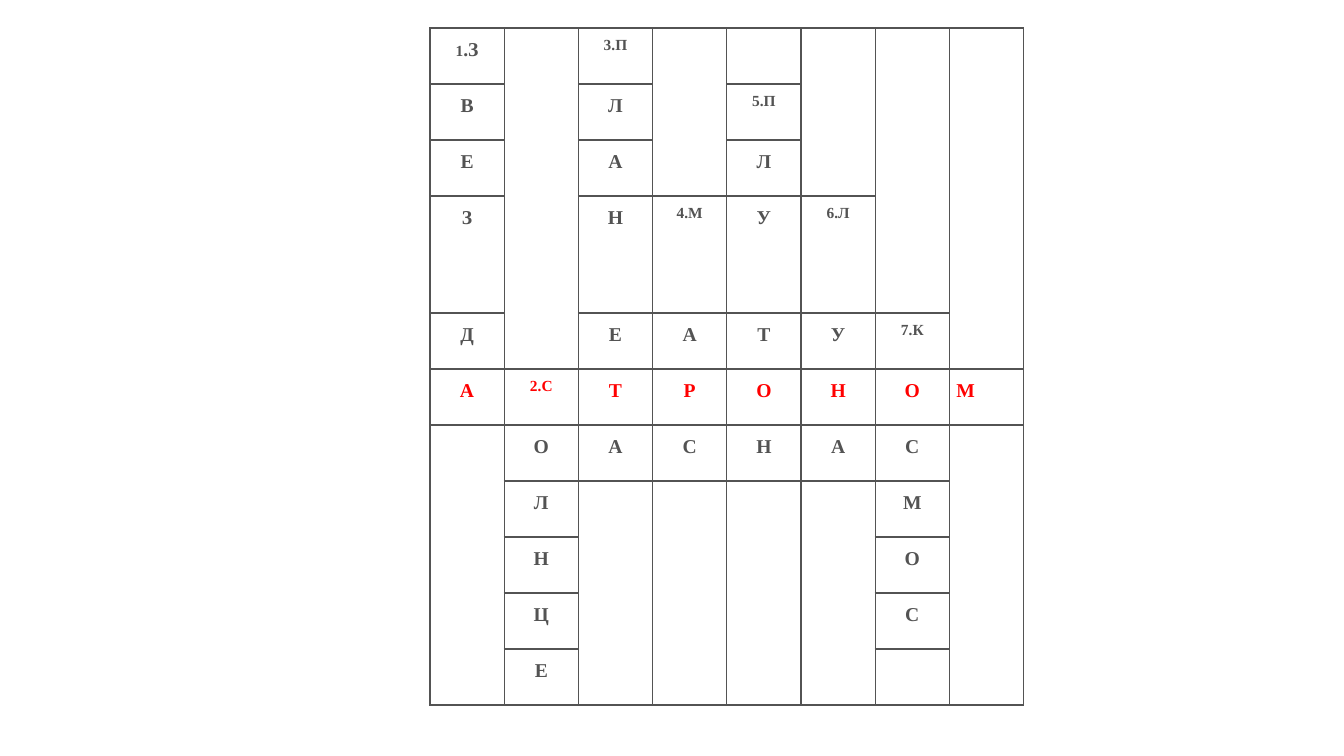
from lxml import etree
from pptx import Presentation
from pptx import util as u
from pptx.dml.color import RGBColor
from pptx.enum import text
from pptx.oxml.ns import qn

PX = 914400 / 100.8
COLORS = {"ink": "535353", "answer": "FF0000", "line": "535353"}
FONT = {"name": "Times New Roman", "bold": True}
SMALL, LARGE = u.Pt(11), u.Pt(14)
ANSWER = 5  # row that holds the solution word
TALL = 3
# "^" joins a cell to the one above; "~" parts runs of different size
GRID = [row.split("|") for row in (
    "1~.З||3.П|||||",
    "В|^|Л|^|5.П|^|^|^",
    "Е|^|А|^|Л|^|^|^",
    "З|^|Н|4.М|У|6.Л|^|^",
    "Д|^|Е|А|Т|У|7.К|^",
    "А|2.С|Т|Р|О|Н|О|М",
    "|О|А|С|Н|А|С|",
    "^|Л|||||М|^",
    "^|Н|^|^|^|^|О|^",
    "^|Ц|^|^|^|^|С|^",
    "^|Е|^|^|^|^||^",
)]


def px(n):
    return u.Emu(round(n * PX))


def border(cell):
    props = cell._tc.get_or_add_tcPr()
    for side in ("lnL", "lnR", "lnT", "lnB"):
        line = etree.SubElement(props, qn("a:" + side), w=str(u.Pt(1)))
        fill = etree.SubElement(line, qn("a:solidFill"))
        etree.SubElement(fill, qn("a:srgbClr"), val=COLORS["line"])


def write(cell, words, color, align):
    edges = {"left": px(7), "right": px(7), "top": 0, "bottom": 0}
    for side, size in edges.items():
        setattr(cell, "margin_" + side, size)
    para = cell.text_frame.paragraphs[0]
    para.alignment, para.line_spacing = align, 1.5
    for part in words.split("~"):
        run = para.add_run()
        run.text = part
        look = FONT | {"size": SMALL if part[0].isdigit() else LARGE}
        for key, value in look.items():
            setattr(run.font, key, value)
        run.font.color.rgb = RGBColor.from_string(color)


def depth(row, col):
    """Count the rows that the cell spans."""
    end = row + 1
    while end < len(GRID) and GRID[end][col] == "^":
        end += 1
    return end - row


def crossword(slide, left, top, width, height):
    rows, cols = len(GRID), len(GRID[0])
    table = slide.shapes.add_table(
        rows, cols, px(left), px(top), px(width), px(height)).table
    table.first_row = table.horz_banding = False
    for col in table.columns:
        col.width = px(width / cols)
    step = height // (rows + 1)
    for r, row in enumerate(table.rows):
        row.height = px(height - step * (rows - 1) if r == TALL else step)
    for r, line in enumerate(GRID):
        for c, words in enumerate(line):
            cell = table.cell(r, c)
            border(cell)
            cell.fill.background()
            if words == "^":
                continue
            if depth(r, c) > 1:
                cell.merge(table.cell(r + depth(r, c) - 1, c))
            if words:
                last = r == ANSWER and c == cols - 1
                write(cell, words,
                      COLORS["answer" if r == ANSWER else "ink"],
                      text.PP_ALIGN.JUSTIFY if last else text.PP_ALIGN.CENTER)


def main():
    deck = Presentation()
    deck.slide_width, deck.slide_height = px(1344), px(756)
    slide = deck.slides.add_slide(deck.slide_layouts[6])
    crossword(slide, 430, 28, 594, 677)
    deck.save("out.pptx")


if __name__ == "__main__":
    main()
